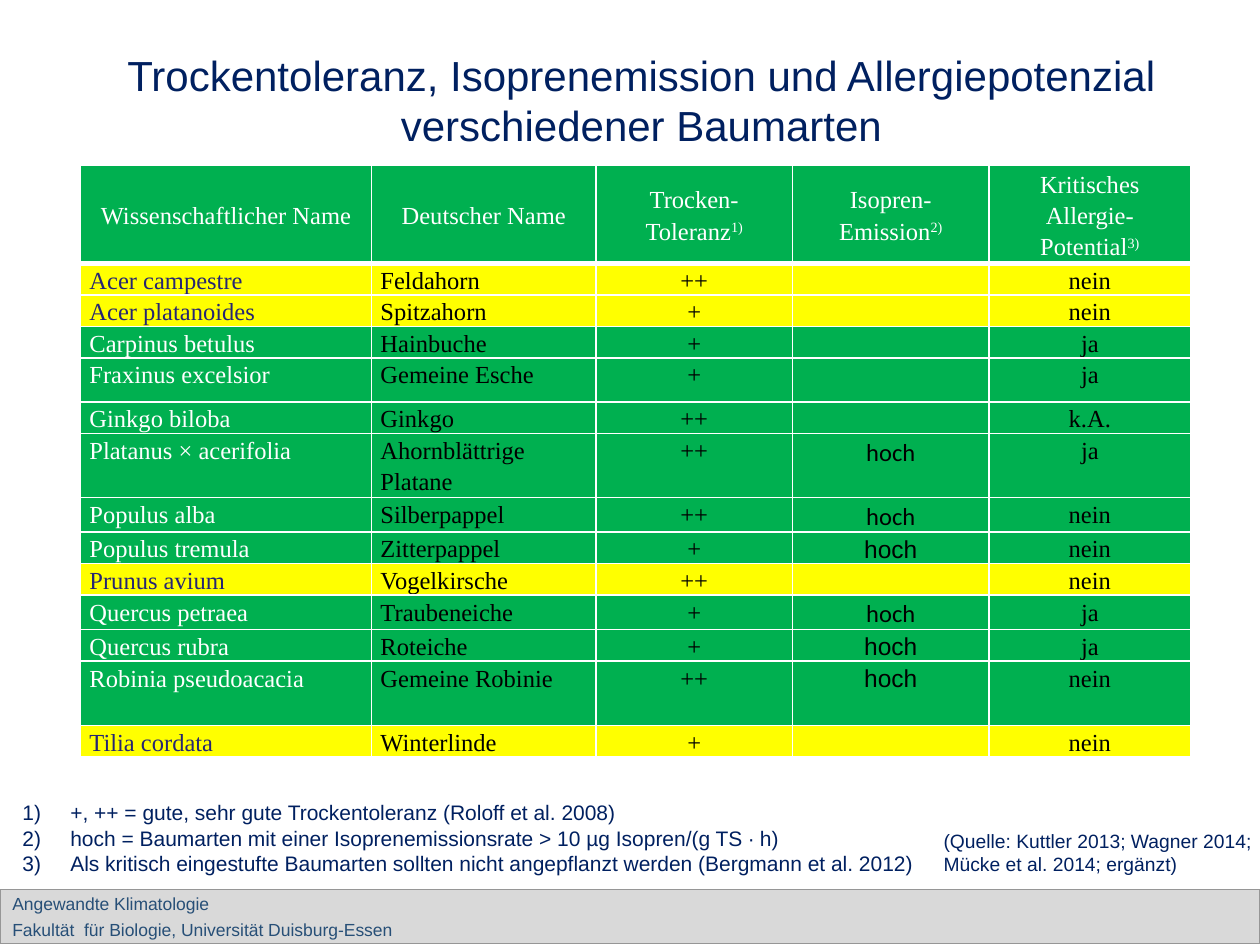
import pptx
import pptx.util
import pptx.dml.color
import pptx.enum.shapes
import pptx.enum.text
import lxml.etree
from pptx.util import Inches, Pt

ALIGN = pptx.enum.text.PP_ALIGN
ANCHOR = pptx.enum.text.MSO_ANCHOR
NS = "{http://schemas.openxmlformats.org/drawingml/2006/main}"
GREEN, YELLOW, WHITE, BLACK = "00B050", "FFFF00", "FFFFFF", "000000"
NAVY, SERIF = "002060", "Times New Roman"


def rgb(value):
    return pptx.dml.color.RGBColor.from_string(value)


def add_run(p, text, size, font, color):
    r = p.add_run()
    r.text = text
    r.font.size = Pt(size)
    r.font.name = font
    r.font.color.rgb = rgb(color)
    return r


prs = pptx.Presentation()
prs.slide_width, prs.slide_height = Inches(10), Inches(7.5)
s = prs.slides.add_slide(prs.slide_layouts[6])

sp = s.shapes.add_shape(pptx.enum.shapes.MSO_SHAPE.RECTANGLE,
                        Inches(0), Inches(7.06), Inches(10), Inches(0.43))
sp.shadow.inherit = False
sp.fill.solid()
sp.fill.fore_color.rgb = rgb("D9D9D9")
sp.line.color.rgb = rgb("969696")
sp.line.width = Pt(1)
tf = sp.text_frame
tf.word_wrap = True
tf.vertical_anchor = ANCHOR.MIDDLE
for i, text in enumerate(["Angewandte Klimatologie",
                          "Fakultät  für Biologie, Universität Duisburg-Essen"]):
    p = tf.add_paragraph() if i else tf.paragraphs[0]
    p.alignment = ALIGN.LEFT
    if i:
        p.space_before = Pt(3)
    add_run(p, text, 10, "Arial", "274F77")

headers = [
    (["Wissenschaftlicher Name"], ""),
    (["Deutscher Name"], ""),
    (["Trocken-", "Toleranz"], "1)"),
    (["Isopren-", "Emission"], "2)"),
    (["Kritisches Allergie-", "Potential"], "3)"),
]
trees = [
    ("Acer campestre", "Feldahorn", "++", "", "nein"),
    ("Acer platanoides", "Spitzahorn", "+", "", "nein"),
    ("Carpinus betulus", "Hainbuche", "+", "", "ja"),
    ("Fraxinus excelsior", "Gemeine Esche", "+", "", "ja"),
    ("Ginkgo biloba", "Ginkgo", "++", "", "k.A."),
    ("Platanus × acerifolia", "Ahornblättrige Platane", "++", "hoch", "ja"),
    ("Populus alba", "Silberpappel", "++", "hoch", "nein"),
    ("Populus tremula", "Zitterpappel", "+", "hoch", "nein"),
    ("Prunus avium", "Vogelkirsche", "++", "", "nein"),
    ("Quercus petraea", "Traubeneiche", "+", "hoch", "ja"),
    ("Quercus rubra", "Roteiche", "+", "hoch", "ja"),
    ("Robinia pseudoacacia", "Gemeine Robinie", "++", "hoch", "nein"),
    ("Tilia cordata", "Winterlinde", "+", "", "nein"),
]
recommended = {"Acer campestre", "Acer platanoides", "Prunus avium", "Tilia cordata"}
calibri_rows = {"Platanus × acerifolia", "Populus alba", "Quercus petraea"}
row_heights = {0: 0.78, 4: 0.35, 6: 0.51, 12: 0.51}

table = s.shapes.add_table(len(trees) + 1, len(headers), Inches(0.64), Inches(1.31),
                           Inches(8.8), Inches(4.67)).table
for column, width in zip(table.columns, [2.31, 1.78, 1.56, 1.56, 1.6]):
    column.width = Inches(width)
for i, row in enumerate(table.rows):
    row.height = Inches(row_heights.get(i, 0.25))
    name = trees[i - 1][0] if i else ""
    fill = YELLOW if name in recommended else GREEN
    for j, cell in enumerate(row.cells):
        cell.margin_left = cell.margin_right = Inches(0.07)
        cell.margin_top = cell.margin_bottom = 0
        cell.vertical_anchor = ANCHOR.TOP if i else ANCHOR.MIDDLE
        for side in "LRTB":
            width = 3 if i == 0 and side == "B" else 1
            ln = lxml.etree.SubElement(cell._tc.get_or_add_tcPr(), NS + "ln" + side,
                                       w=str(Pt(width)))
            solid = lxml.etree.SubElement(ln, NS + "solidFill")
            lxml.etree.SubElement(solid, NS + "srgbClr", val=WHITE)
        cell.fill.solid()
        cell.fill.fore_color.rgb = rgb(fill)

        lines, mark = ([trees[i - 1][j]], "") if i else headers[j]
        font = SERIF
        if i and j == 3:
            font = "Calibri" if name in calibri_rows else "Arial"
        color = BLACK
        if i == 0:
            color = WHITE
        elif j == 0:
            color = "262673" if fill == YELLOW else WHITE
        for k, text in enumerate(lines):
            p = cell.text_frame.add_paragraph() if k else cell.text_frame.paragraphs[0]
            p.alignment = ALIGN.CENTER if i == 0 or j > 1 else ALIGN.LEFT
            p.line_spacing = 1.15
            if text:
                add_run(p, text, 14, font, color)
            else:
                lxml.etree.SubElement(p._p, NS + "endParaRPr", sz="1000")
        if mark:
            r = add_run(p, mark, 14, font, color)
            r.font._element.set("baseline", "30000")

notes = [
    "+, ++ = gute, sehr gute Trockentoleranz (Roloff et al. 2008)",
    "hoch = Baumarten mit einer Isoprenemissionsrate > 10 µg Isopren/(g TS ∙ h)",
    "Als kritisch eingestufte Baumarten sollten nicht angepflanzt werden (Bergmann et al. 2012)",
]
boxes = [
    ((0.18, 0.34, 9.82, 0.91), 24, ALIGN.CENTER, False,
     ["Trockentoleranz, Isoprenemission und Allergiepotenzial verschiedener Baumarten"]),
    ((0.08, 6.3, 7.56, 0.71), 12, ALIGN.LEFT, True, notes),
    ((7.39, 6.53, 2.72, 0.47), 11, ALIGN.LEFT, False,
     ["(Quelle: Kuttler 2013; Wagner 2014; Mücke et al. 2014; ergänzt)"]),
]
for at, size, align, numbered, lines in boxes:
    tf = s.shapes.add_textbox(*map(Inches, at)).text_frame
    tf.word_wrap = True
    for i, text in enumerate(lines):
        p = tf.add_paragraph() if i else tf.paragraphs[0]
        p.alignment = align
        if numbered:
            pPr = p._p.get_or_add_pPr()
            pPr.set("marL", str(Inches(0.38)))
            pPr.set("indent", str(-Inches(0.38)))
            lxml.etree.SubElement(pPr, NS + "buFont", typeface="+mj-lt")
            lxml.etree.SubElement(pPr, NS + "buAutoNum", type="arabicParenR")
        add_run(p, text, size, "Arial", NAVY)

prs.save("out.pptx")
